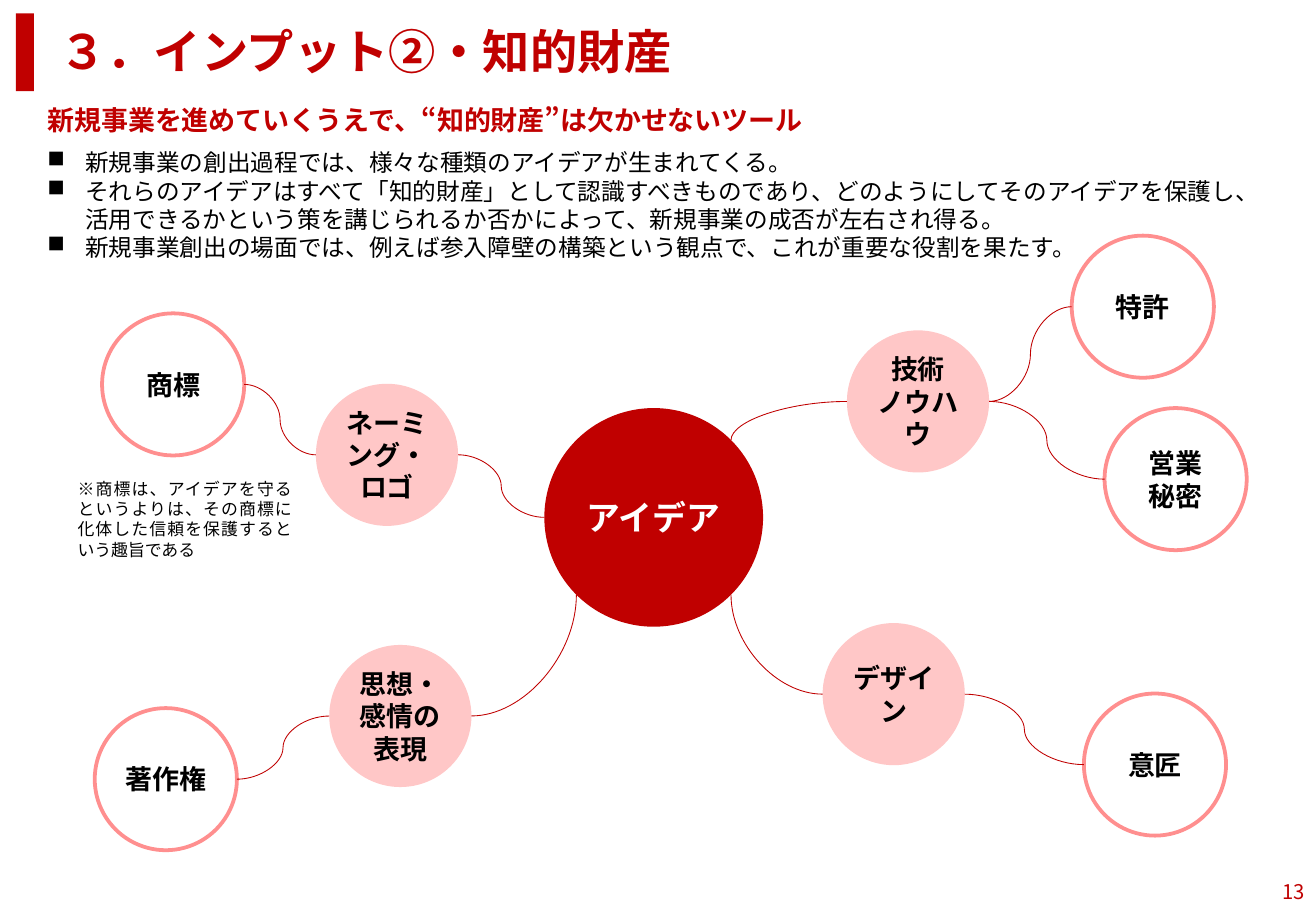
from dataclasses import dataclass
from math import cos, pi, sin

from lxml import etree
from pptx import Presentation
from pptx.dml.color import RGBColor
from pptx.enum.lang import MSO_LANGUAGE_ID
from pptx.enum.shapes import MSO_CONNECTOR, MSO_SHAPE
from pptx.enum.text import MSO_ANCHOR, MSO_AUTO_SIZE, PP_ALIGN
from pptx.oxml.ns import qn
from pptx.shapes.autoshape import Shape
from pptx.slide import Slide
from pptx.util import Emu, Pt

PX = 9144  # one hundredth of an inch
FONT = "Noto Sans CJK JP"
RED = RGBColor(0xC0, 0x00, 0x00)
PINK = RGBColor(0xFF, 0xC7, 0xC7)
ROSE = RGBColor(0xFF, 0x8F, 0x8F)
BLACK = RGBColor(0x00, 0x00, 0x00)
WHITE = RGBColor(0xFF, 0xFF, 0xFF)
LEFT, CENTER, RIGHT, JUSTIFY = PP_ALIGN.LEFT, PP_ALIGN.CENTER, PP_ALIGN.RIGHT, PP_ALIGN.JUSTIFY
TOP, MIDDLE = MSO_ANCHOR.TOP, MSO_ANCHOR.MIDDLE
FIXED_SIZE = MSO_AUTO_SIZE.NONE
CURVE = MSO_CONNECTOR.CURVE
OVAL, RECTANGLE = MSO_SHAPE.OVAL, MSO_SHAPE.RECTANGLE
JAPANESE = MSO_LANGUAGE_ID.JAPANESE

# Connection sites of an ellipse, counted anticlockwise from the top
SITE_LEFT, SITE_LOWER_LEFT, SITE_LOWER_RIGHT, SITE_RIGHT, SITE_UPPER_RIGHT = 2, 3, 5, 6, 7


@dataclass(frozen=True)
class TextStyle:
    size: int
    color: RGBColor
    bold: bool = False
    align: PP_ALIGN = LEFT
    anchor: MSO_ANCHOR = TOP
    inset: bool = False
    bullet_indent: int = 0


@dataclass(frozen=True)
class CircleStyle:
    diameter: int
    fill: RGBColor
    outline: RGBColor | None
    text: TextStyle


@dataclass(frozen=True)
class Circle:
    left: int
    top: int
    lines: tuple[str, ...]
    style: CircleStyle

    def site(self, index: int) -> tuple[Emu, Emu]:
        """Position of a connection site on the rim."""
        radius, angle = self.style.diameter / 2, index * pi / 4
        return (px(self.left + radius - radius * sin(angle)),
                px(self.top + radius - radius * cos(angle)))


@dataclass(frozen=True)
class Link:
    start: str
    start_site: int
    end: str
    end_site: int
    preset: str = "curvedConnector3"


@dataclass(frozen=True)
class TextBox:
    box: tuple[int, int, int, int]
    paragraphs: tuple[str, ...]
    style: TextStyle


LABEL = TextStyle(16, BLACK, True, CENTER, MIDDLE)
CORE = CircleStyle(180, RED, None, TextStyle(20, WHITE, True, CENTER, MIDDLE))
CATEGORY = CircleStyle(117, PINK, None, LABEL)
RIGHTS = CircleStyle(117, WHITE, ROSE, LABEL)

TITLE = TextBox((39, 13, 1008, 57), ("３．インプット②・知的財産",),
                TextStyle(28, RED, True, inset=True))
TEXT_BOXES = (
    TextBox((39, 85, 999, 58), ("新規事業を進めていくうえで、“知的財産”は欠かせないツール",),
            TextStyle(16, RED, True)),
    TextBox((39, 122, 1008, 67), (
        "新規事業の創出過程では、様々な種類のアイデアが生まれてくる。",
        "それらのアイデアはすべて「知的財産」として認識すべきものであり、どのようにしてそのアイデアを保護し、"
        "活用できるかという策を講じられるか否かによって、新規事業の成否が左右され得る。",
        "新規事業創出の場面では、例えば参入障壁の構築という観点で、これが重要な役割を果たす。",
    ), TextStyle(14, BLACK, bullet_indent=31)),
    TextBox((54, 389, 196, 61),
            ("※商標は、アイデアを守るというよりは、その商標に化体した信頼を保護するという趣旨である",),
            TextStyle(10, BLACK, align=JUSTIFY, inset=True)),
    TextBox((1035, 719, 49, 30), ("13",), TextStyle(12, RED, align=RIGHT, inset=True)),
)
CIRCLES = {
    "idea": Circle(448, 336, ("アイデア",), CORE),
    "know_how": Circle(697, 272, ("技術", "ノウハウ"), CATEGORY),
    "patent": Circle(882, 194, ("特許",), RIGHTS),
    "trade_secret": Circle(909, 336, ("営業", "秘密"), RIGHTS),
    "design": Circle(677, 513, ("デザイン",), CATEGORY),
    "design_right": Circle(892, 571, ("意匠",), RIGHTS),
    "naming": Circle(260, 316, ("ネーミング・ロゴ",), CATEGORY),
    "trademark": Circle(84, 258, ("商標",), RIGHTS),
    "expression": Circle(271, 531, ("思想・感情の表現",), CATEGORY),
    "copyright": Circle(78, 583, ("著作権",), RIGHTS),
}
LINKS = (
    Link("know_how", SITE_LEFT, "idea", SITE_UPPER_RIGHT, "curvedConnector2"),
    Link("design", SITE_LEFT, "idea", SITE_LOWER_RIGHT, "curvedConnector2"),
    Link("expression", SITE_RIGHT, "idea", SITE_LOWER_LEFT, "curvedConnector2"),
    Link("idea", SITE_LEFT, "naming", SITE_RIGHT),
    Link("know_how", SITE_RIGHT, "patent", SITE_LEFT),
    Link("know_how", SITE_RIGHT, "trade_secret", SITE_LEFT),
    Link("design", SITE_RIGHT, "design_right", SITE_LEFT),
    Link("naming", SITE_LEFT, "trademark", SITE_RIGHT),
    Link("expression", SITE_LEFT, "copyright", SITE_RIGHT),
)


def px(length: float) -> Emu:
    return Emu(round(length * PX))


def write(shape: Shape, paragraphs: tuple[str, ...], style: TextStyle) -> None:
    frame = shape.text_frame
    frame_format = {"word_wrap": True, "auto_size": FIXED_SIZE, "vertical_anchor": style.anchor}
    if not style.inset:
        frame_format |= dict.fromkeys(
            ("margin_left", "margin_top", "margin_right", "margin_bottom"), 0)
    for name, value in frame_format.items():
        setattr(frame, name, value)
    frame.text = "\n".join(paragraphs)
    font_format = {"size": Pt(style.size), "bold": style.bold, "name": FONT,
                   "language_id": JAPANESE}
    for paragraph in frame.paragraphs:
        paragraph.alignment = style.align
        if style.bullet_indent:
            add_bullet(paragraph._p.get_or_add_pPr(), px(style.bullet_indent))
        for run in paragraph.runs:
            for name, value in font_format.items():
                setattr(run.font, name, value)
            run.font.color.rgb = style.color
            etree.SubElement(run._r.get_or_add_rPr(), qn("a:ea"), typeface=FONT)


def add_bullet(properties: etree.ElementBase, indent: Emu) -> None:
    properties.set("marL", str(indent))
    properties.set("indent", str(-indent))
    etree.SubElement(properties, qn("a:buChar"), char="■")


def add_filled(slide: Slide, preset: MSO_SHAPE, box: tuple[int, int, int, int],
               fill: RGBColor, outline: RGBColor | None = None) -> Shape:
    shape = slide.shapes.add_shape(preset, *map(px, box))
    shape.shadow.inherit = False
    shape.fill.solid()
    shape.fill.fore_color.rgb = fill
    if outline is None:
        shape.line.fill.background()
    else:
        shape.line.color.rgb = outline
        shape.line.width = Pt(2.25)
    return shape


def add_circle(slide: Slide, circle: Circle) -> Shape:
    style = circle.style
    box = (circle.left, circle.top, style.diameter, style.diameter)
    shape = add_filled(slide, OVAL, box, style.fill, style.outline)
    write(shape, circle.lines, style.text)
    return shape


def add_link(slide: Slide, link: Link, shapes: dict[str, Shape]) -> None:
    """Draw a curve glued to the rims of two circles."""
    ends = (("a:stCxn", link.start, link.start_site), ("a:endCxn", link.end, link.end_site))
    (x1, y1), (x2, y2) = (CIRCLES[name].site(site) for _, name, site in ends)
    connector = slide.shapes.add_connector(CURVE, x1, y1, x2, y2)
    connector.line.color.rgb = RED
    connector.line.width = Pt(0.5)
    element = connector._element
    element.spPr.find(qn("a:prstGeom")).set("prst", link.preset)
    etree.SubElement(element.spPr, qn("a:effectLst"))
    for tag, name, site in ends:
        etree.SubElement(element.nvCxnSpPr.cNvCxnSpPr, qn(tag),
                         id=str(shapes[name].shape_id), idx=str(site))


def main() -> None:
    deck = Presentation()
    deck.slide_width, deck.slide_height = px(1083), px(750)
    slide = deck.slides.add_slide(deck.slide_layouts[5])
    title = slide.shapes.title
    for name, value in zip(("left", "top", "width", "height"), TITLE.box):
        setattr(title, name, px(value))
    write(title, TITLE.paragraphs, TITLE.style)
    add_filled(slide, RECTANGLE, (13, 11, 15, 64), RED)
    for text in TEXT_BOXES:
        write(slide.shapes.add_textbox(*map(px, text.box)), text.paragraphs, text.style)
    shapes = {name: add_circle(slide, circle) for name, circle in CIRCLES.items()}
    for link in LINKS:
        add_link(slide, link, shapes)
    deck.save("out.pptx")


if __name__ == "__main__":
    main()
